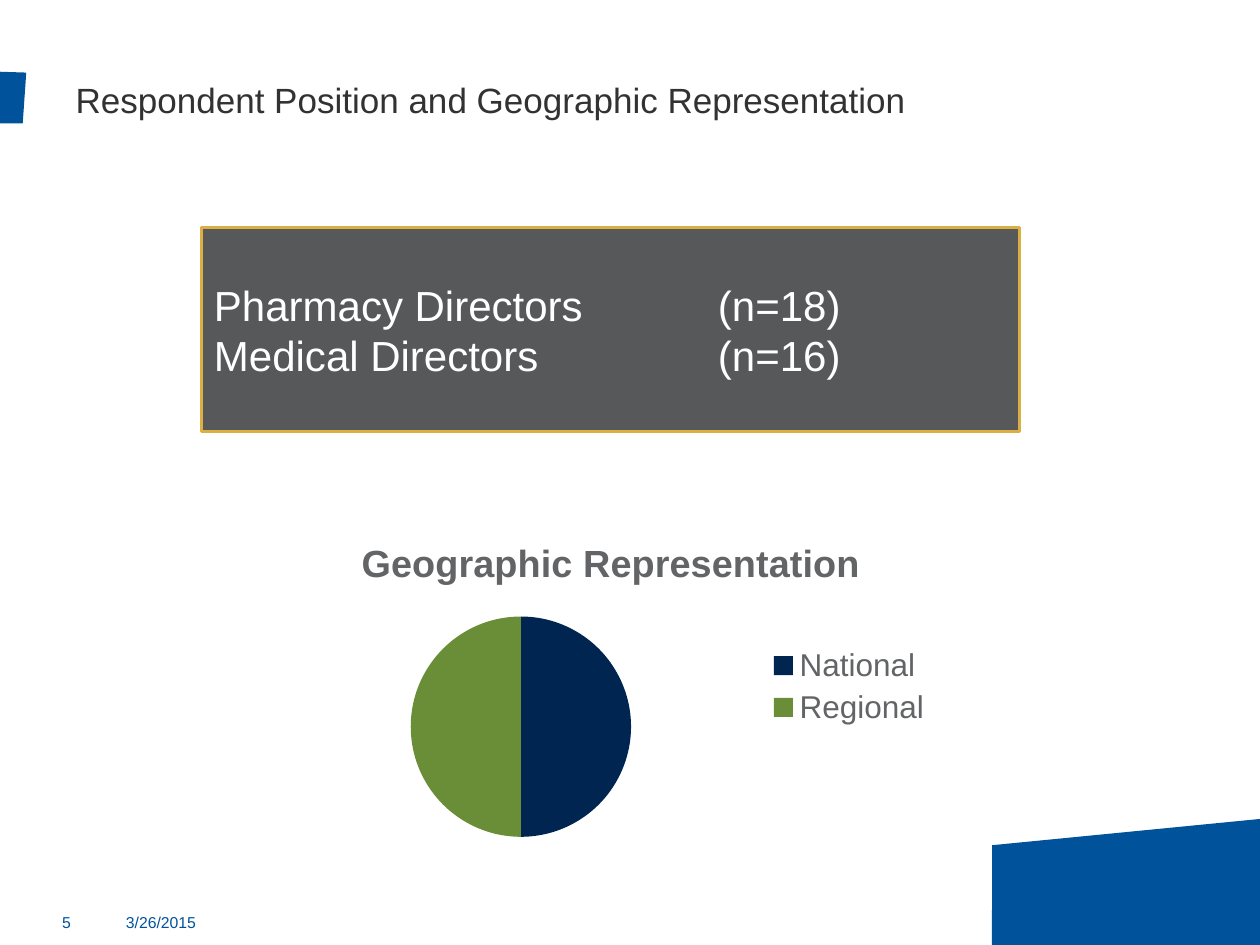
import pptx
import pptx.chart.data
import pptx.dml.color
import pptx.enum.chart
import pptx.enum.shapes
import pptx.enum.text
import pptx.oxml
import pptx.oxml.ns
import pptx.util

Pt = pptx.util.Pt
FONT = "Arial"
BLUE = "00539B"
CHART_GRAY = "636466"


def color(hex_code):
    return pptx.dml.color.RGBColor.from_string(hex_code)


def style_font(font, size, hex_code, bold=False):
    font.name = FONT
    font.size = Pt(size)
    font.bold = bold
    font.color.rgb = color(hex_code)


def add_run(paragraph, text, size, hex_code):
    run = paragraph.add_run()
    run.text = text
    style_font(run.font, size, hex_code)


def add_blue_outline(slide, points):
    builder = slide.shapes.build_freeform(Pt(points[0][0]), Pt(points[0][1]))
    builder.add_line_segments([(Pt(x), Pt(y)) for x, y in points[1:]])
    shape = builder.convert_to_shape()
    shape.shadow.inherit = False
    shape.fill.solid()
    shape.fill.fore_color.rgb = color(BLUE)
    shape.line.fill.background()


def set_title(slide, text):
    title = slide.shapes.title
    title.left, title.top, title.width, title.height = Pt(36), Pt(39.6), Pt(648), Pt(33)
    frame = title.text_frame
    frame.vertical_anchor = pptx.enum.text.MSO_ANCHOR.BOTTOM
    frame.paragraphs[0].alignment = pptx.enum.text.PP_ALIGN.LEFT
    add_run(frame.paragraphs[0], text, 20, "323233")


def add_footer_text(slide, text, left, width):
    frame = slide.shapes.add_textbox(Pt(left), Pt(521.3), Pt(width), Pt(15)).text_frame
    frame.word_wrap = True
    frame.margin_left = frame.margin_top = frame.margin_right = frame.margin_bottom = 0
    add_run(frame.paragraphs[0], text, 9, BLUE)


def add_tab_stop(paragraph, position):
    properties = paragraph._p.get_or_add_pPr()
    properties.append(pptx.oxml.parse_xml(
        f'<a:tabLst {pptx.oxml.ns.nsdecls("a")}>'
        f'<a:tab pos="{Pt(position)}" algn="l"/></a:tabLst>'))


def add_respondent_box(slide, respondents):
    box = slide.shapes.add_shape(
        pptx.enum.shapes.MSO_SHAPE.RECTANGLE, Pt(115.2), Pt(130), Pt(467.5), Pt(116.6))
    box.shadow.inherit = False
    box.fill.solid()
    box.fill.fore_color.rgb = color("575859")
    box.line.color.rgb = color("DBAF42")
    box.line.width = Pt(2)
    frame = box.text_frame
    frame.word_wrap = True
    frame.vertical_anchor = pptx.enum.text.MSO_ANCHOR.MIDDLE
    for index, (position, count) in enumerate(respondents):
        paragraph = frame.add_paragraph() if index else frame.paragraphs[0]
        paragraph.alignment = pptx.enum.text.PP_ALIGN.LEFT
        add_tab_stop(paragraph, 288)
        add_run(paragraph, f"{position}\t(n={count})", 24, "FFFFFF")


def set_plot_layout(chart, **fractions):
    """Place the inner plot area at x, y, w, h as fractions of the chart."""
    plot_area = chart._chartSpace.chart.plotArea
    for layout in plot_area.findall(pptx.oxml.ns.qn("c:layout")):
        plot_area.remove(layout)
    values = "".join(f'<c:{key} val="{value}"/>' for key, value in fractions.items())
    plot_area.insert(0, pptx.oxml.parse_xml(
        f'<c:layout {pptx.oxml.ns.nsdecls("c")}><c:manualLayout>'
        '<c:layoutTarget val="inner"/><c:xMode val="edge"/><c:yMode val="edge"/>'
        f'{values}</c:manualLayout></c:layout>'))


def add_region_pie(slide, title, regions):
    data = pptx.chart.data.CategoryChartData()
    data.categories = [name for name, share, fill in regions]
    data.add_series(title, [share for name, share, fill in regions])
    chart = slide.shapes.add_chart(
        pptx.enum.chart.XL_CHART_TYPE.PIE,
        Pt(158.4), Pt(296.6), Pt(381.6), Pt(191.5), data).chart
    style_font(chart.font, 18, CHART_GRAY)

    chart.has_title = True
    paragraph = chart.chart_title.text_frame.paragraphs[0]
    run = paragraph.add_run()
    run.text = title
    style_font(run.font, 21.6, CHART_GRAY, bold=True)
    chart.chart_title.include_in_layout = False

    chart.has_legend = True
    chart.legend.position = pptx.enum.chart.XL_LEGEND_POSITION.RIGHT
    chart.legend.include_in_layout = False
    style_font(chart.legend.font, 18, CHART_GRAY)

    plot = chart.plots[0]
    plot.vary_by_categories = True
    for index, (name, share, fill) in enumerate(regions):
        point_format = plot.series[0].points[index].format
        point_format.fill.solid()
        point_format.fill.fore_color.rgb = color(fill)
        point_format.line.fill.background()
    set_plot_layout(chart, x=0.2, y=0.29, w=0.33, h=0.66)


def main():
    presentation = pptx.Presentation()
    presentation.slide_width, presentation.slide_height = Pt(720), Pt(540)
    slide = presentation.slides.add_slide(presentation.slide_layouts[5])

    add_blue_outline(slide, [(567, 483), (720, 468), (720, 540), (566.8, 540)])
    add_blue_outline(slide, [(0, 41), (15, 41.5), (13, 70.5), (0, 70.5)])
    set_title(slide, "Respondent Position and Geographic Representation")
    add_footer_text(slide, "3/26/2015", 72, 52.6)
    add_footer_text(slide, "5", 35.5, 27.4)
    add_respondent_box(slide, [("Pharmacy Directors", 18), ("Medical Directors", 16)])
    add_region_pie(slide, "Geographic Representation",
                   [("National", 50, "002551"), ("Regional", 50, "6A8E37")])
    presentation.save("out.pptx")


if __name__ == "__main__":
    main()
